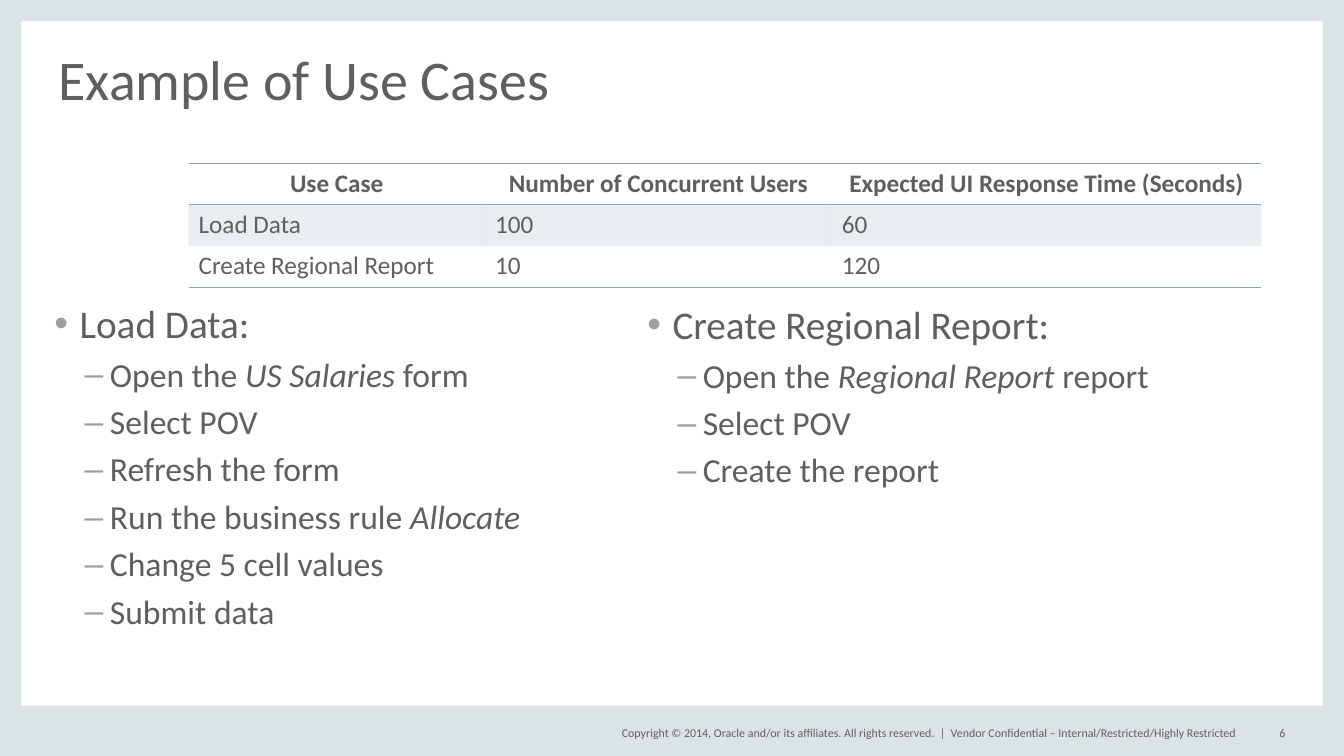
from lxml import etree
from pptx import Presentation, util as u
from pptx.dml.color import RGBColor
from pptx.enum import shapes, text
from pptx.oxml.ns import qn

COLORS = {"frame": "DCE3E4", "text": "5F5F5F", "bullet": "9F9F9F", "table": "8DA6B1"}
LEFT, CENTER, RIGHT = text.PP_ALIGN.LEFT, text.PP_ALIGN.CENTER, text.PP_ALIGN.RIGHT
TOP, MIDDLE, BOTTOM = text.MSO_ANCHOR.TOP, text.MSO_ANCHOR.MIDDLE, text.MSO_ANCHOR.BOTTOM


class Deck:
    """Holds the style and the current slide, and adds each kind of element."""

    font = "Calibri"

    def __init__(self, width, height):
        self.prs = Presentation()
        self.prs.slide_width, self.prs.slide_height = u.Inches(width), u.Inches(height)
        self.slide = self.prs.slides.add_slide(self.prs.slide_layouts[3])

    def color(self, name):
        return RGBColor.from_string(COLORS[name])

    def style(self, paragraph, size, bold=False):
        for run in paragraph.runs:
            run.font.name, run.font.size, run.font.bold = self.font, u.Pt(size), bold
            run.font.color.rgb = self.color("text")

    def place(self, holder, box, anchor):
        holder.left, holder.top, holder.width, holder.height = map(u.Inches, box)
        frame = holder.text_frame
        frame.margin_left = frame.margin_right = frame.margin_top = frame.margin_bottom = 0
        frame.word_wrap, frame.auto_size = True, text.MSO_AUTO_SIZE.NONE
        frame.vertical_anchor = anchor
        return frame

    def band(self, *box):
        band = self.slide.shapes.add_shape(shapes.MSO_SHAPE.RECTANGLE, *map(u.Inches, box))
        band.shadow.inherit = False
        band.fill.solid()
        band.fill.fore_color.rgb = self.color("frame")
        band.line.fill.background()

    def title(self, words, box):
        frame = self.place(self.slide.shapes.title, box, BOTTOM)
        frame.text = words
        heading = frame.paragraphs[0]
        heading.alignment, heading.line_spacing = LEFT, 0.8
        self.style(heading, 40)

    def footer(self, words, box, align=LEFT):
        holder = self.slide.shapes.add_textbox(*map(u.Inches, box))
        frame = self.place(holder, box, MIDDLE)
        frame.text = words
        frame.paragraphs[0].alignment = align
        self.style(frame.paragraphs[0], 8.5)

    def steps(self, index, box, lines):
        """Fills a body placeholder; words between asterisks become italic."""
        frame = self.place(self.slide.placeholders[index], box, TOP)
        for number, line in enumerate(lines):
            step = frame.add_paragraph() if number else frame.paragraphs[0]
            step.level = min(number, 1)
            indent, mark, size = (0.55, "–", 24) if number else (0.25, "•", 28)
            props = step._p.get_or_add_pPr()
            props.set("marL", str(u.Inches(indent)))
            props.set("indent", str(u.Inches(-0.25)))
            tint = etree.SubElement(props, qn("a:buClr"))
            etree.SubElement(tint, qn("a:srgbClr"), val=COLORS["bullet"])
            etree.SubElement(props, qn("a:buChar"), char=mark)
            step.line_spacing = 0.9
            step.space_before = u.Pt(8 if number else 0)
            for part, words in enumerate(line.split("*")):
                if words:
                    run = step.add_run()
                    run.text, run.font.italic = words, part % 2 == 1
            self.style(step, size)

    def borders(self, cell, ruled):
        props = cell._tc.get_or_add_tcPr()
        for place, side in enumerate(("L", "R", "T", "B")):
            line = etree.Element(qn(f"a:ln{side}"), w=str(u.Pt(1)))
            if side in ruled:
                paint = etree.SubElement(line, qn("a:solidFill"))
                etree.SubElement(paint, qn("a:srgbClr"), val=COLORS["table"])
            else:
                etree.SubElement(line, qn("a:noFill"))
            props.insert(place, line)

    def table(self, box, widths, row_height, rows):
        holder = self.slide.shapes.add_table(len(rows), len(widths), *map(u.Inches, box))
        table = holder.table
        table.horz_banding = False
        for column, width in zip(table.columns, widths):
            column.width = u.Inches(width)
        for number, row in enumerate(rows):
            table.rows[number].height = u.Inches(row_height)
            for cell, words in zip(table.rows[number].cells, row):
                cell.text = words
                entry = cell.text_frame.paragraphs[0]
                entry.alignment = LEFT if number else CENTER
                self.style(entry, 18, bold=number == 0)
                if number % 2:
                    cell.fill.solid()
                    cell.fill.fore_color.rgb = self.color("table")
                    tint = cell._tc.tcPr.find(".//" + qn("a:srgbClr"))
                    etree.SubElement(tint, qn("a:alpha"), val="20000")
                else:
                    cell.fill.background()
                self.borders(cell, ("TB", "T", "B")[number])


def main():
    width, height, edge, foot = 13.33, 7.5, 0.21, 0.5
    deck = Deck(width, height)
    deck.band(0, 0, edge, height)
    deck.band(width - edge, 0, edge, height)
    deck.band(0, height - foot, width, foot)
    deck.band(0, 0, width, edge)

    deck.title("Example of Use Cases", (0.58, 0.44, 12.17, 0.66))
    deck.table((1.87, 1.62, 10.64, 1.23), (2.94, 3.44, 4.26), 0.41, [
        ("Use Case", "Number of Concurrent Users", "Expected UI Response Time (Seconds)"),
        ("Load Data", "100", "60"),
        ("Create Regional Report", "10", "120"),
    ])
    deck.steps(1, (0.54, 3.02, 6.05, 3.42), [
        "Load Data:", "Open the *US Salaries *form", "Select POV", "Refresh the form",
        "Run the business rule *Allocate*", "Change 5 cell values", "Submit data",
    ])
    deck.steps(2, (6.42, 3.03, 6.05, 3.42), [
        "Create Regional Report:", "Open the *Regional Report *report", "Select POV",
        "Create the report",
    ])

    deck.footer("Copyright © 2014, Oracle and/or its affiliates. All rights reserved.  |",
                (5.88, 7.17, 3.5, 0.2), RIGHT)
    deck.footer("Vendor Confidential – Internal/Restricted/Highly Restricted",
                (9.43, 7.17, 3, 0.2))
    deck.footer("6", (12.33, 7.17, 0.42, 0.2), RIGHT)
    deck.prs.save("out.pptx")


if __name__ == "__main__":
    main()
